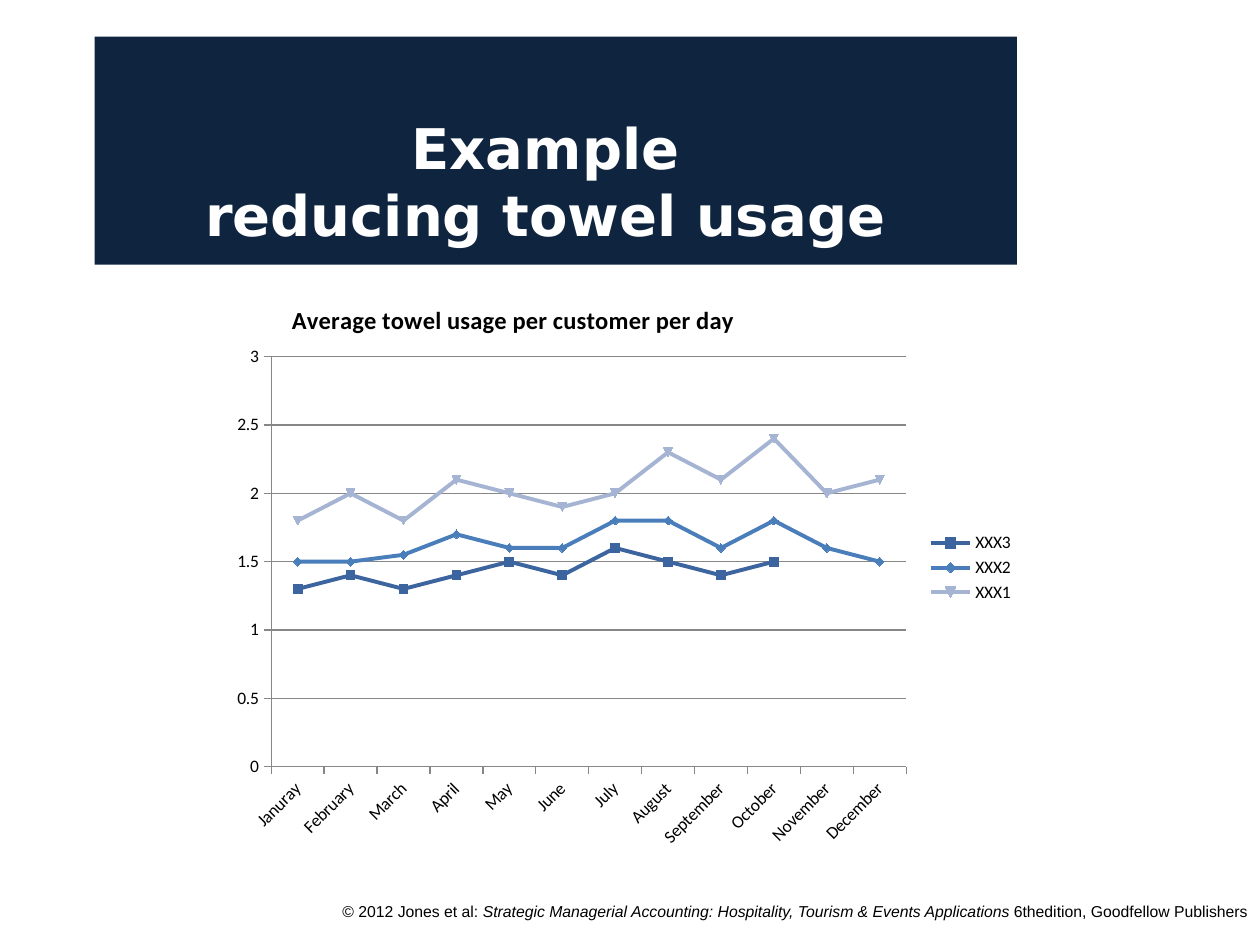
"""Build the towel usage slide with its line chart."""
from lxml.etree import SubElement
from pptx import Presentation
from pptx.chart.data import CategoryChartData
from pptx.dml.color import RGBColor
from pptx.enum.chart import XL_CHART_TYPE, XL_LEGEND_POSITION, XL_TICK_MARK
from pptx.enum.text import MSO_ANCHOR, MSO_AUTO_SIZE, PP_ALIGN
from pptx.oxml.ns import qn
from pptx.util import Inches, Pt

MONTHS = ["Januray", "February", "March", "April", "May", "June", "July",
          "August", "September", "October", "November", "December"]
SERIES = [
    ("XXX3", "3C659F", [1.3, 1.4, 1.3, 1.4, 1.5, 1.4, 1.6, 1.5, 1.4, 1.5, None, None]),
    ("XXX2", "4A7EBB", [1.5, 1.5, 1.55, 1.7, 1.6, 1.6, 1.8, 1.8, 1.6, 1.8, 1.6, 1.5]),
    ("XXX1", "A6B4D4", [1.8, 2, 1.8, 2.1, 2, 1.9, 2, 2.3, 2.1, 2.4, 2, 2.1]),
]


def color(code):
    return RGBColor.from_string(code)


def place(node, index, **spots):
    for old in node.findall(qn("c:layout")):
        node.remove(old)
    layout = node.makeelement(qn("c:layout"), {})
    node.insert(index, layout)
    manual = SubElement(layout, qn("c:manualLayout"))
    if "w" in spots:
        SubElement(manual, qn("c:layoutTarget")).set("val", "inner")
    for side in "xy":
        SubElement(manual, qn(f"c:{side}Mode")).set("val", "edge")
    for key, value in spots.items():
        SubElement(manual, qn(f"c:{key}")).set("val", str(value))


class Deck:
    ink, navy, white, grid = "000000", "0F243E", "FFFFFF", "878787"

    def __init__(self):
        self.file = Presentation()
        self.file.slide_width, self.file.slide_height = Inches(10), Inches(7.5)
        self.slide = self.file.slides.add_slide(self.file.slide_layouts[5])

    def style(self, font, name, size, code, bold=False):
        font.name, font.size, font.bold = name, Pt(size), bold
        font.color.rgb = color(code)

    def title(self, text, left, top, width, height):
        shape = self.slide.shapes.title
        shape.left, shape.top = Inches(left), Inches(top)
        shape.width, shape.height = Inches(width), Inches(height)
        shape.fill.solid()
        shape.fill.fore_color.rgb = color(self.navy)
        frame = shape.text_frame
        frame.text = text
        frame.auto_size = MSO_AUTO_SIZE.NONE
        frame.vertical_anchor = MSO_ANCHOR.BOTTOM
        frame.margin_bottom, frame.margin_right = Inches(0.13), Inches(0.26)
        para = frame.paragraphs[0]
        para.alignment = PP_ALIGN.CENTER
        self.style(para.font, "DejaVu Sans", 32, self.white, True)

    def note(self, parts, left, top, width, height):
        box = self.slide.shapes.add_textbox(
            Inches(left), Inches(top), Inches(width), Inches(height))
        box.text_frame.word_wrap = True
        para = box.text_frame.paragraphs[0]
        para.alignment = PP_ALIGN.RIGHT
        self.style(para.font, "Arial", 9, self.ink)
        for text, slant in parts:
            run = para.add_run()
            run.text, run.font.italic = text, slant

    def chart(self, title, left, top, width, height):
        data = CategoryChartData()
        data.categories = MONTHS
        for name, _, values in SERIES:
            data.add_series(name, values)
        chart = self.slide.shapes.add_chart(
            XL_CHART_TYPE.LINE_MARKERS, Inches(left), Inches(top),
            Inches(width), Inches(height), data).chart
        self.style(chart.font, "Calibri", 10, self.ink)
        chart.has_title = True
        chart.chart_title.include_in_layout = False
        frame = chart.chart_title.text_frame
        frame.text = title
        self.style(frame.paragraphs[0].font, "Calibri", 14, self.ink, True)
        chart.has_legend = True
        chart.legend.position = XL_LEGEND_POSITION.RIGHT
        chart.legend.include_in_layout = False
        self.axes(chart)
        chart.plots[0].vary_by_categories = False
        for line, (_, code, _) in zip(chart.plots[0].series, SERIES):
            self.line(line, code)
        root = chart.element
        place(root.find(".//" + qn("c:title")), 1, x=0.08, y=0.04)
        place(root.find(".//" + qn("c:plotArea")), 0, x=0.06, y=0.14, w=0.79, h=0.7)

    def axes(self, chart):
        months, usage = chart.category_axis, chart.value_axis
        usage.minimum_scale, usage.maximum_scale, usage.major_unit = 0, 3, 0.5
        usage.has_major_gridlines = True
        for axis in (months, usage):
            axis.major_tick_mark = XL_TICK_MARK.OUTSIDE
            self.style(axis.tick_labels.font, "Calibri", 10, self.ink)
        for part in (months, usage, usage.major_gridlines):
            part.format.line.color.rgb = color(self.grid)
            part.format.line.width = Pt(0.75)
        body = chart.element.find(f".//{qn('c:catAx')}/{qn('c:txPr')}/{qn('a:bodyPr')}")
        body.set("rot", "-2700000")

    def line(self, line, code):
        line.smooth = False
        line.format.line.color.rgb = color(code)
        line.format.line.width = Pt(2.25)
        mark = line.marker
        mark.size = 5
        mark.format.fill.solid()
        mark.format.fill.fore_color.rgb = color(code)
        mark.format.line.color.rgb = color(code)


def main():
    deck = Deck()
    deck.note([
        ("© 2012 Jones et al: ", False),
        ("Strategic Managerial Accounting: Hospitality, Tourism & Events Applications ", True),
        ("6thedition, Goodfellow Publishers", False),
    ], 2.23, 7.11, 7.77, 0.39)
    deck.title("Example\vreducing towel usage", 0.75, 0.29, 7.32, 1.81)
    deck.chart("Average towel usage per customer per day", 1.77, 2.18, 6.38, 4.65)
    deck.file.save("out.pptx")


if __name__ == "__main__":
    main()
